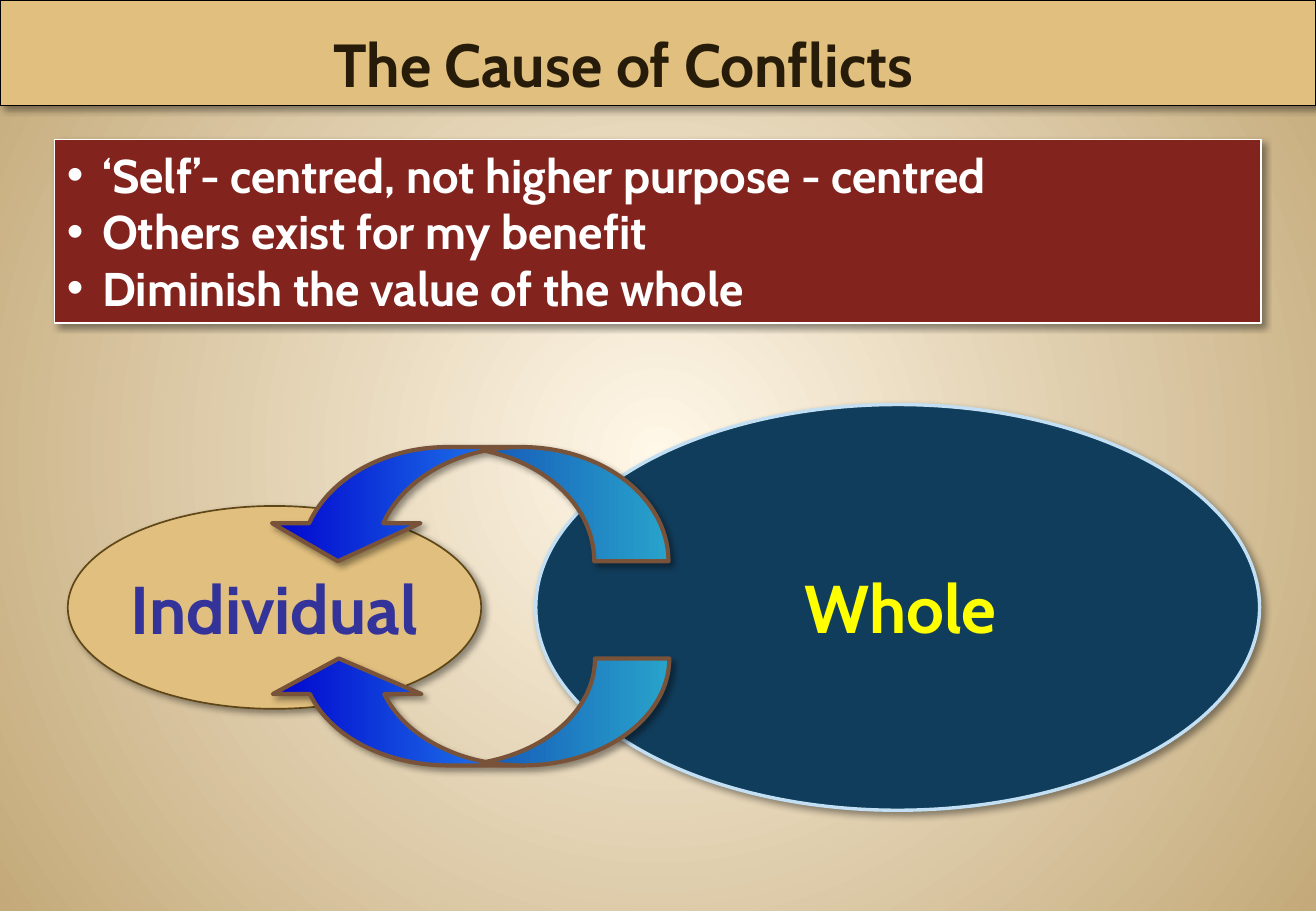
from lxml.etree import SubElement
from pptx import Presentation
from pptx.dml.color import RGBColor
from pptx.enum.shapes import MSO_SHAPE as Shape
from pptx.enum.text import MSO_ANCHOR as Anchor, MSO_AUTO_SIZE as AutoSize, PP_ALIGN as Align
from pptx.oxml.ns import qn
from pptx.util import Pt

COLORS = {
    "glow": "FFF7E8", "sand": "C4AA7A", "tan": "E1BF7E", "maroon": "82231D",
    "navy": "113D5C", "sky": "C2DFF3", "bronze": "5F4616", "brown": "795339",
    "blue": "0000CC", "cyan": "33CCFF", "indigo": "333399", "yellow": "FFFF00",
    "dark": "261C09", "white": "FFFFFF", "black": "000000",
}
FONT = "Cabin"
CAUSES = [
    "‘Self’- centred, not higher purpose - centred",
    "Others exist for my benefit",
    "Diminish the value of the whole",
]


def rgb(name):
    """Return the named colour."""
    return RGBColor.from_string(COLORS[name])


def place(part, box):
    """Move a part to a box of left, top, width and height in points."""
    part.left, part.top, part.width, part.height = map(Pt, box)


def outline(part, color, width):
    """Give a part its outline and soft drop shadow."""
    part.line.color.rgb = rgb(color)
    part.line.width = Pt(width)
    part.shadow.inherit = False
    effects = part.element.xpath("./p:spPr/a:effectLst")[0]
    shadow = SubElement(effects, qn("a:outerShdw"), blurRad=str(Pt(4)), dist=str(Pt(3)),
                        dir="2700000", algn="tl", rotWithShape="0")
    tint = SubElement(shadow, qn("a:srgbClr"), val=COLORS["black"])
    SubElement(tint, qn("a:alpha"), val="40000")


def paint(part, fill, line, width):
    """Give a part a plain fill, an outline and a shadow."""
    part.fill.solid()
    part.fill.fore_color.rgb = rgb(fill)
    outline(part, line, width)


def set_gradient(fill, start, end):
    """Fill with a gradient between two named colours."""
    fill.gradient()
    for stop, name, position in zip(fill.gradient_stops, (start, end), (0, 1)):
        stop.color.rgb = rgb(name)
        stop.position = position


def style(paragraph, size, color, align):
    """Format a paragraph and its runs."""
    paragraph.alignment = align
    paragraph.line_spacing = 1.0
    paragraph.space_before = Pt(0)
    for run in paragraph.runs:
        run.font.name = FONT
        run.font.size = Pt(size)
        run.font.bold = True
        run.font.color.rgb = rgb(color)


def add_background(slide):
    """Fill the slide with a glow from its centre."""
    set_gradient(slide.background.fill, "glow", "sand")
    gradient = slide.element.xpath(".//p:bg//a:gradFill")[0]
    gradient.remove(gradient.find(qn("a:lin")))
    circle = SubElement(gradient, qn("a:path"), path="circle")
    SubElement(circle, qn("a:fillToRect"), l="50000", t="50000", r="50000", b="50000")


def add_heading(slide, box):
    """Set the title band across the top."""
    heading = slide.shapes.title
    place(heading, box)
    paint(heading, "tan", "black", 0.75)
    frame = heading.text_frame
    frame.text = "The Cause of Conflicts"
    frame.auto_size = AutoSize.NONE
    frame.vertical_anchor = Anchor.BOTTOM
    frame.margin_right = Pt(48.6)
    style(frame.paragraphs[0], 36, "dark", Align.CENTER)


def add_causes(slide, box):
    """Set the bulleted list of causes."""
    causes = slide.placeholders[1]
    place(causes, box)
    paint(causes, "maroon", "white", 0.75)
    frame = causes.text_frame
    frame.text = "\n".join(CAUSES)
    frame.auto_size = AutoSize.NONE
    frame.vertical_anchor = Anchor.TOP
    for paragraph in frame.paragraphs:
        props = paragraph._p.get_or_add_pPr()
        props.set("marL", str(Pt(21)))
        props.set("indent", str(Pt(-21)))
        SubElement(props, qn("a:buFont"), typeface="Arial")
        SubElement(props, qn("a:buChar"), char="•")
        style(paragraph, 28, "white", Align.LEFT)


def add_oval(slide, box, fill, line, width):
    """Draw one oval and return it."""
    oval = slide.shapes.add_shape(Shape.OVAL, *map(Pt, box))
    paint(oval, fill, line, width)
    return oval


def add_label(part, text, color, wrap):
    """Write a large centred label in a part."""
    frame = part.text_frame
    frame.text = text
    frame.word_wrap = wrap
    frame.vertical_anchor = Anchor.MIDDLE
    style(frame.paragraphs[0], 40, color, Align.CENTER)


def add_arrow(slide, box, adjustments, flipped):
    """Draw a curved arrow from the whole back to the individual."""
    arrow = slide.shapes.add_shape(Shape.CURVED_DOWN_ARROW, *map(Pt, box))
    arrow.rotation = 180
    for index, value in enumerate(adjustments):
        arrow.adjustments[index] = value
    set_gradient(arrow.fill, "blue", "cyan")
    arrow.fill.gradient_angle = 0
    arrow.element.xpath("./p:spPr/a:gradFill")[0].set("rotWithShape", "0")
    outline(arrow, "brown", 2.5)
    if flipped:
        arrow.element.xpath("./p:spPr/a:xfrm")[0].set("flipV", "1")


def add_relation(slide, box):
    """Draw the individual, the whole and the arrows between them."""
    left, top, width, height = box
    whole_width = 429
    whole_left = left + width - whole_width
    add_oval(slide, (whole_left, top, whole_width, height), "navy", "sky", 2)
    individual = add_oval(slide, (left, top + height / 4, 245, height / 2), "tan", "bronze", 1)
    add_label(individual, "Individual", "indigo", False)
    whole = slide.shapes.add_textbox(
        Pt(whole_left + 12), Pt(top + height / 2 - 28), Pt(408), Pt(55.5))
    add_label(whole, "Whole", "yellow", True)
    add_arrow(slide, (left + 116.5, top + 150.5, 240, 63.4), (0.695, 1.39, 0.333), False)
    add_arrow(slide, (left + 116, top + 25.2, 240, 67.7), (0.65, 1.301, 0.333), True)


def main():
    """Build and save the slide."""
    deck = Presentation()
    deck.slide_width, deck.slide_height = Pt(780), Pt(540)
    slide = deck.slides.add_slide(deck.slide_layouts[1])
    add_background(slide)
    add_heading(slide, (0, 0, 780, 62.6))
    add_causes(slide, (32.4, 82.8, 715, 108.7))
    add_relation(slide, (40.2, 239.8, 706.4, 240.5))
    deck.save("out.pptx")


if __name__ == "__main__":
    main()
